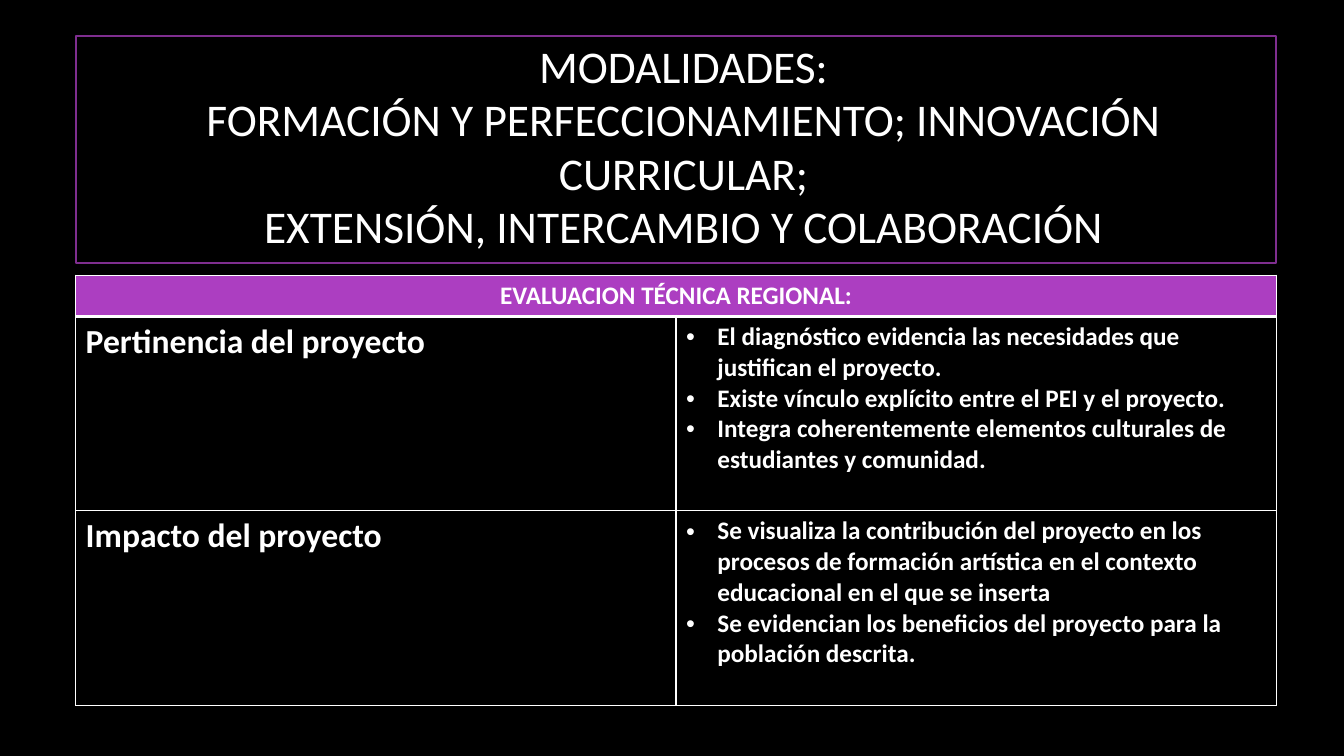
import copy

import pptx
import pptx.dml.color
import pptx.enum.shapes
import pptx.enum.text
import pptx.oxml
import pptx.oxml.ns
import pptx.util
from lxml import etree

COLORS = {"background": "000000", "text": "FFFFFF", "frame": "7F2E8F", "header": "AC3EC1"}
FONT = "Calibri"
WIDTH, HEIGHT = pptx.util.Inches(13.33), pptx.util.Inches(7.5)
LEFT, CONTENT = 0.0563, 0.8935
INDENT = pptx.util.Inches(0.31)
ALIGN = pptx.enum.text.PP_ALIGN

TITLE = "\v".join([
    "MODALIDADES:",
    "FORMACIÓN Y PERFECCIONAMIENTO; INNOVACIÓN CURRICULAR;",
    "EXTENSIÓN, INTERCAMBIO Y COLABORACIÓN",
])
HEADER = "EVALUACION TÉCNICA REGIONAL:"
CRITERIA = [
    ("Pertinencia del proyecto", [
        "El diagnóstico evidencia las necesidades que justifican el proyecto.",
        "Existe vínculo explícito entre el PEI y el proyecto.",
        "Integra coherentemente elementos culturales de estudiantes y comunidad.",
    ]),
    ("Impacto del proyecto", [
        "Se visualiza la contribución del proyecto en los procesos de formación "
        "artística en el contexto educacional en el que se inserta",
        "Se evidencian los beneficios del proyecto para la población descrita.",
    ]),
]


def rgb(name):
    return pptx.dml.color.RGBColor.from_string(COLORS[name])


def box(left, top, width, height):
    return [round(v) for v in (left * WIDTH, top * HEIGHT, width * WIDTH, height * HEIGHT)]


def add_child(parent, tag, **attrs):
    return etree.SubElement(parent, pptx.oxml.ns.qn(tag), attrs)


def write(tf, *texts, size=18, bold=True, align=ALIGN.LEFT, bullet=False, spacing=None):
    for i, text in enumerate(texts):
        p = tf.paragraphs[0] if i == 0 else tf.add_paragraph()
        p.text = text
        p.alignment = align
        if spacing:
            p.line_spacing = spacing
        if bullet:
            pPr = p._p.get_or_add_pPr()
            pPr.set("marL", str(INDENT))
            pPr.set("indent", str(-INDENT))
            add_child(pPr, "a:buFont", typeface="Arial")
            add_child(pPr, "a:buChar", char="•")
        for r in p.runs:
            r.font.name = FONT
            r.font.size = pptx.util.Pt(size)
            r.font.bold = bold
            r.font.color.rgb = rgb("text")
        for br in p._p.findall(pptx.oxml.ns.qn("a:br")):
            br.insert(0, copy.deepcopy(p.runs[0]._r.rPr))


def add_frame(s, *area):
    sp = s.shapes.add_shape(pptx.enum.shapes.MSO_SHAPE.RECTANGLE, *box(*area))
    sp.shadow.inherit = False
    sp.fill.background()
    sp.line.color.rgb = rgb("frame")
    sp.line.width = pptx.util.Pt(1.5)


def format_title(s, *area):
    sp = s.shapes.title
    sp.left, sp.top, sp.width, sp.height = box(*area)
    tf = sp.text_frame
    tf.word_wrap = True
    tf.auto_size = pptx.enum.text.MSO_AUTO_SIZE.NONE
    tf.vertical_anchor = pptx.enum.text.MSO_ANCHOR.MIDDLE
    write(tf, TITLE, size=32.4, bold=False, align=ALIGN.CENTER, spacing=0.98)


def format_cell(cell, fill=None, top=1, bottom=1):
    tcPr = cell._tc.get_or_add_tcPr()
    for side, width in {"L": 1, "R": 1, "T": top, "B": bottom}.items():
        ln = add_child(tcPr, f"a:ln{side}", w=str(pptx.util.Pt(width)))
        add_child(add_child(ln, "a:solidFill"), "a:srgbClr", val=COLORS["text"])
    if fill:
        cell.fill.solid()
        cell.fill.fore_color.rgb = rgb(fill)
    else:
        cell.fill.background()


def add_criteria_table(s, *area):
    rows = len(CRITERIA) + 1
    table = s.shapes.add_table(rows, 2, *box(*area)).table
    header_height = round(0.0547 * HEIGHT)
    body_height = (round(area[3] * HEIGHT) - header_height) // len(CRITERIA)
    for i, row in enumerate(table.rows):
        row.height = body_height if i else header_height
        for cell in row.cells:
            if i == 0:
                format_cell(cell, fill="header", bottom=3)
            else:
                format_cell(cell, top=3 if i == 1 else 1)
    table.cell(0, 0).merge(table.cell(0, 1))
    write(table.cell(0, 0).text_frame, HEADER, align=ALIGN.CENTER)
    for i, (name, points) in enumerate(CRITERIA, 1):
        write(table.cell(i, 0).text_frame, name, size=24)
        write(table.cell(i, 1).text_frame, *points, bullet=True)


def main():
    prs = pptx.Presentation()
    prs.slide_width, prs.slide_height = WIDTH, HEIGHT
    s = prs.slides.add_slide(prs.slide_layouts.get_by_name("Title Only"))
    s.background.fill.solid()
    s.background.fill.fore_color.rgb = rgb("background")
    add_frame(s, LEFT, 0.048, CONTENT, 0.3)
    format_title(s, LEFT, 0.0893, 0.9047, 0.212)
    add_criteria_table(s, LEFT, 0.364, CONTENT, 0.569)
    prs.save("out.pptx")


if __name__ == "__main__":
    main()
